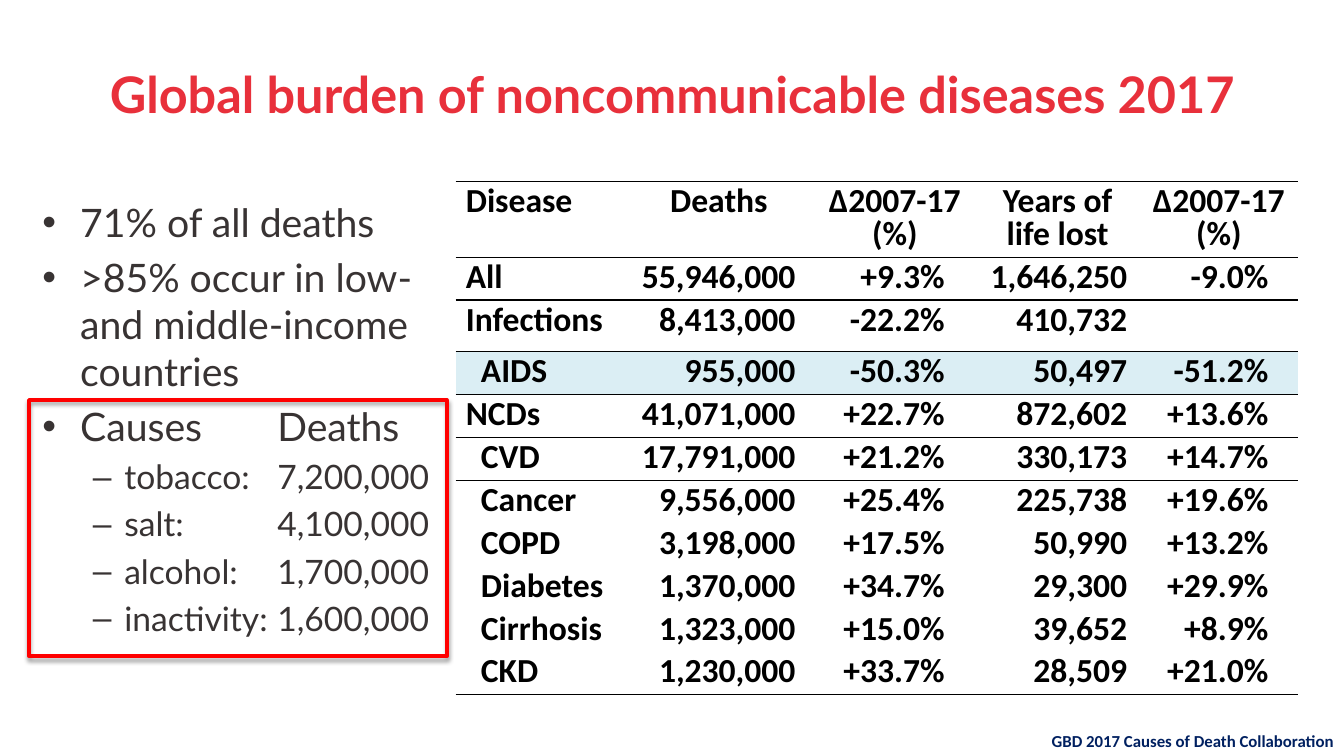
from lxml import etree
from pptx import Presentation
from pptx.dml.color import RGBColor
from pptx.enum import shapes, text
from pptx.oxml import ns
from pptx.util import Inches, Pt

TITLE = "Global burden of noncommunicable diseases 2017"
SOURCE = "GBD 2017 Causes of Death Collaboration"
POINTS = [  # level, text
    (0, "71% of all deaths"),
    (0, ">85% occur in low- and middle-income countries"),
    (0, "Causes\tDeaths"),
    (1, "tobacco:\t7,200,000"),
    (1, "salt:\t4,100,000"),
    (1, "alcohol:\t1,700,000"),
    (1, "inactivity:\t1,600,000"),
]
HEADINGS = ("Disease", "Deaths", "Δ2007-17 (%)", "Years of life lost", "Δ2007-17 (%)")
DISEASES = [
    ("All", "55,946,000", "+9.3%", "1,646,250", "-9.0%"),
    ("Infections", "8,413,000", "-22.2%", "410,732", ""),
    ("AIDS", "955,000", "-50.3%", "50,497", "-51.2%"),
    ("NCDs", "41,071,000", "+22.7%", "872,602", "+13.6%"),
    ("CVD", "17,791,000", "+21.2%", "330,173", "+14.7%"),
    ("Cancer", "9,556,000", "+25.4%", "225,738", "+19.6%"),
    ("COPD", "3,198,000", "+17.5%", "50,990", "+13.2%"),
    ("Diabetes", "1,370,000", "+34.7%", "29,300", "+29.9%"),
    ("Cirrhosis", "1,323,000", "+15.0%", "39,652", "+8.9%"),
    ("CKD", "1,230,000", "+33.7%", "28,509", "+21.0%"),
]
TOP_LEVEL = {"All", "Infections", "NCDs"}
HIGHLIGHTED = "AIDS"
RULED_EDGES = {0, 1, 2, 3, 4, 5, len(DISEASES) + 1}
COLUMN_WIDTHS = (1.66, 1.9, 1.59, 1.64, 1.56)
NUMBER_MARGINS = (0, 0.19, 0.3, 0.13, 0.29)
ROW_HEIGHT, TALL_ROWS = 0.42, {0: 0.75, 2: 0.51}
NO_STYLE = "{2D5ABB26-0587-4C30-8999-92F81FD0307C}"
COLORS = {"title": "E8303B", "body": "383333", "table": "000000",
          "highlight": "DBEEF4", "source": "002060", "frame": "FF0000"}


def color(name):
    return RGBColor.from_string(COLORS[name])


def set_font(para, face, size, color_name, bold=False):
    para.font.name = face
    para.font.size = Pt(size)
    para.font.bold = bold
    para.font.color.rgb = color(color_name)


def place(shape, left, top, width, height):
    shape.left, shape.top = Inches(left), Inches(top)
    shape.width, shape.height = Inches(width), Inches(height)


def add_tab_stop(para, position):
    properties = para._p.get_or_add_pPr()
    stops = etree.SubElement(properties, ns.qn("a:tabLst"))
    etree.SubElement(stops, ns.qn("a:tab"), pos=str(Inches(position)), algn="l")


def add_rule(cell, tag):
    """Draw a 1 pt line on one side of the cell: a:lnT or a:lnB."""
    line = etree.SubElement(cell._tc.get_or_add_tcPr(), ns.qn(tag), w=str(Pt(1)))
    fill = etree.SubElement(line, ns.qn("a:solidFill"))
    etree.SubElement(fill, ns.qn("a:srgbClr"), val=COLORS["table"])


def fill_cell(cell, row, column, value, disease):
    if row in RULED_EDGES:
        add_rule(cell, "a:lnT")
    if row + 1 in RULED_EDGES:
        add_rule(cell, "a:lnB")
    if disease == HIGHLIGHTED:
        cell.fill.solid()
        cell.fill.fore_color.rgb = color("highlight")
    else:
        cell.fill.background()
    cell.text = value
    para = cell.text_frame.paragraphs[0]
    para.line_spacing = 0.8
    set_font(para, "Calibri", 24, "table", bold=True)
    if column == 0:
        para.alignment = text.PP_ALIGN.LEFT
        if row and disease not in TOP_LEVEL:
            cell.margin_left = Inches(0.25)
    elif row == 0:
        para.alignment = text.PP_ALIGN.CENTER
    else:
        para.alignment = text.PP_ALIGN.RIGHT
        cell.margin_right = Inches(NUMBER_MARGINS[column])


def add_disease_table(page):
    rows = [HEADINGS] + DISEASES
    heights = [TALL_ROWS.get(row, ROW_HEIGHT) for row in range(len(rows))]
    frame = page.shapes.add_table(
        len(rows), len(HEADINGS), Inches(4.52), Inches(1.8),
        Inches(sum(COLUMN_WIDTHS)), Inches(sum(heights)))
    table = frame.table
    table.first_row = table.horz_banding = False
    table._tbl.tblPr.find(ns.qn("a:tableStyleId")).text = NO_STYLE
    for column, width in zip(table.columns, COLUMN_WIDTHS):
        column.width = Inches(width)
    for row, (values, height) in enumerate(zip(rows, heights)):
        table.rows[row].height = Inches(height)
        for column, value in enumerate(values):
            fill_cell(table.cell(row, column), row, column, value, values[0])


def main():
    deck = Presentation()
    deck.slide_width, deck.slide_height = Inches(13.33), Inches(7.5)
    page = deck.slides.add_slide(deck.slide_layouts[1])

    title = page.shapes.title
    place(title, 0.67, 0.3, 12, 1.25)
    title.text_frame.text = TITLE
    set_font(title.text_frame.paragraphs[0], "Lato", 36, "title", bold=True)

    add_disease_table(page)

    source = page.shapes.add_textbox(Inches(10.29), Inches(7.2), Inches(3.04), Inches(0.3))
    source.text_frame.word_wrap = False
    source.text_frame.text = SOURCE
    para = source.text_frame.paragraphs[0]
    para.alignment = text.PP_ALIGN.RIGHT
    set_font(para, "Calibri", 12, "source", bold=True)

    body = page.placeholders[1]
    place(body, 0.32, 1.92, 4.14, 4.6)
    body.text_frame.auto_size = text.MSO_AUTO_SIZE.NONE
    body.text_frame.text = "\n".join(point for _, point in POINTS)
    for para, (level, point) in zip(body.text_frame.paragraphs, POINTS):
        para.level = level
        if "\t" in point:
            add_tab_stop(para, 2.33)
        set_font(para, "Lato", 24 if level else 28, "body")

    # The theme's soft shadow stays on this frame.
    frame = page.shapes.add_shape(
        shapes.MSO_SHAPE.RECTANGLE, Inches(0.29), Inches(3.97), Inches(4.14), Inches(2.54))
    frame.fill.background()
    frame.line.color.rgb = color("frame")
    frame.line.width = Pt(3)

    deck.save("out.pptx")


if __name__ == "__main__":
    main()
